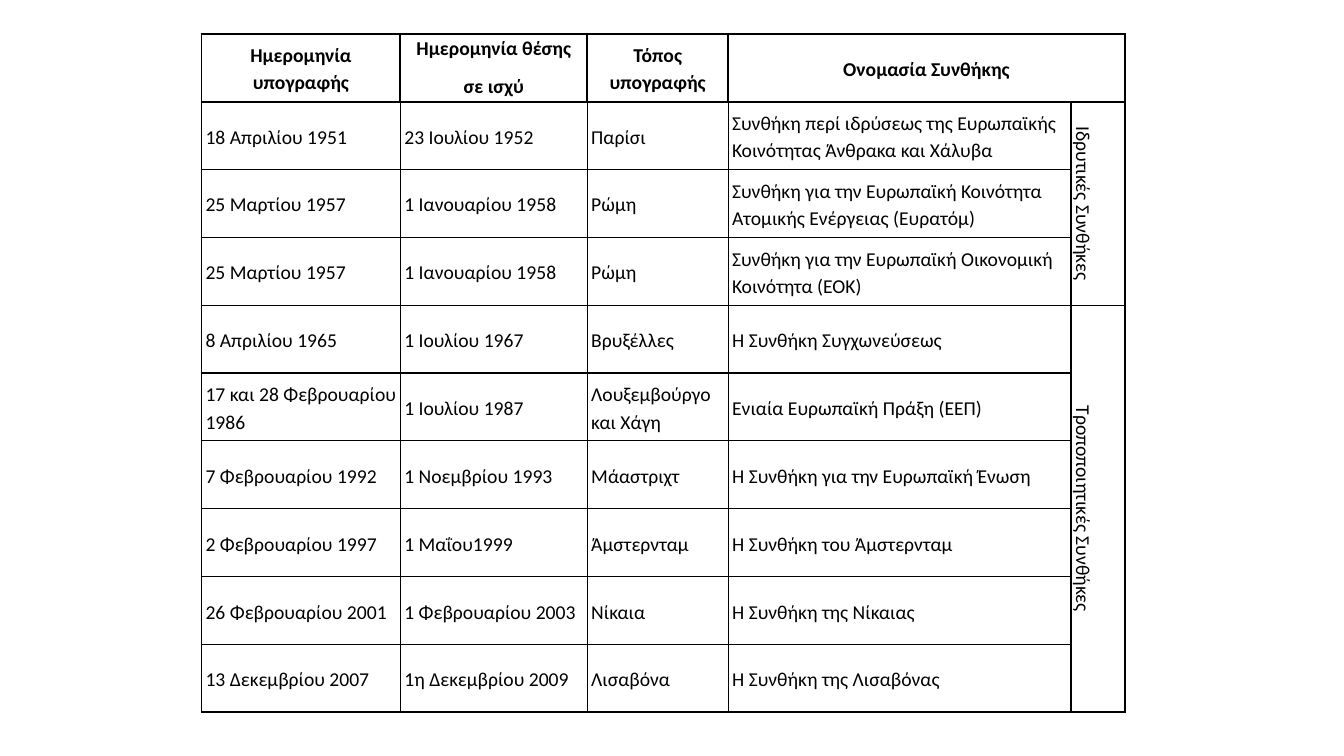
import pptx
import pptx.dml.color
import pptx.enum.text
import pptx.oxml
import pptx.oxml.ns
import pptx.util
from pptx.util import Cm

# Content: header lines, treaties and the vertical group labels
HEADERS = [
    ["Ημερομηνία υπογραφής"],
    ["Ημερομηνία θέσης", "σε ισχύ"],
    ["Τόπος υπογραφής"],
    ["Ονομασία Συνθήκης"],
]
TREATIES = [
    ("18 Απριλίου 1951", "23 Ιουλίου 1952", "Παρίσι",
     "Συνθήκη περί ιδρύσεως της Ευρωπαϊκής Κοινότητας Άνθρακα και Χάλυβα"),
    ("25 Μαρτίου 1957", "1 Ιανουαρίου 1958", "Ρώμη",
     "Συνθήκη για την Ευρωπαϊκή Κοινότητα Ατομικής Ενέργειας (Ευρατόμ)"),
    ("25 Μαρτίου 1957", "1 Ιανουαρίου 1958", "Ρώμη",
     "Συνθήκη για την Ευρωπαϊκή Οικονομική Κοινότητα (ΕΟΚ)"),
    ("8 Απριλίου 1965", "1 Ιουλίου 1967", "Βρυξέλλες",
     "Η Συνθήκη Συγχωνεύσεως"),
    ("17 και 28 Φεβρουαρίου 1986", "1 Ιουλίου 1987", "Λουξεμβούργο και Χάγη",
     "Ενιαία Ευρωπαϊκή Πράξη (ΕΕΠ)"),
    ("7 Φεβρουαρίου 1992", "1 Νοεμβρίου 1993", "Μάαστριχτ",
     "Η Συνθήκη για την Ευρωπαϊκή Ένωση"),
    ("2 Φεβρουαρίου 1997", "1 Μαΐου1999", "Άμστερνταμ",
     "Η Συνθήκη του Άμστερνταμ"),
    ("26 Φεβρουαρίου 2001", "1 Φεβρουαρίου 2003", "Νίκαια",
     "Η Συνθήκη της Νίκαιας"),
    ("13 Δεκεμβρίου 2007", "1η Δεκεμβρίου 2009", "Λισαβόνα",
     "Η Συνθήκη της Λισαβόνας"),
]
GROUPS = [("Ιδρυτικές Συνθήκες", 3), ("Τροποποιητικές Συνθήκες", 6)]

# Look and measures
BLACK = pptx.dml.color.RGBColor(0, 0, 0)
FONT = "Calibri"
THIN, THICK = 1, 1.5
COLUMN_WIDTHS = [5.01, 4.71, 3.55, 8.64, 1.36]
ROW_HEIGHT = 1.71
ROW_COUNT = len(TREATIES) + 1
GROUP_COLUMN = len(COLUMN_WIDTHS) - 1


def write_cell(cell, lines, bold=False, centred=False, line_spacing=1.15):
    cell.vertical_anchor = pptx.enum.text.MSO_ANCHOR.MIDDLE
    cell.margin_left = cell.margin_right = Cm(0.1)
    cell.margin_top = cell.margin_bottom = 0
    frame = cell.text_frame
    for index, line in enumerate(lines):
        para = frame.add_paragraph() if index else frame.paragraphs[0]
        para.line_spacing = line_spacing
        para.space_after = pptx.util.Pt(10)
        if centred:
            para.alignment = pptx.enum.text.PP_ALIGN.CENTER
        span = para.add_run()
        span.text = line
        span.font.name = FONT
        span.font.size = pptx.util.Pt(14)
        span.font.bold = bold
        span.font.color.rgb = BLACK


def draw_borders(cell, left, right, top, bottom):
    properties = cell._tc.get_or_add_tcPr()
    for side, width in zip("LRTB", (left, right, top, bottom)):
        properties.append(pptx.oxml.parse_xml(
            f'<a:ln{side} {pptx.oxml.ns.nsdecls("a")} w="{pptx.util.Pt(width)}">'
            f'<a:solidFill><a:srgbClr val="{BLACK}"/></a:solidFill></a:ln{side}>'))
    cell.fill.background()


def main():
    deck = pptx.Presentation()
    deck.slide_width, deck.slide_height = Cm(33.87), Cm(19.05)
    page = deck.slides.add_slide(deck.slide_layouts[6])

    # Table grid
    table = page.shapes.add_table(
        ROW_COUNT, len(COLUMN_WIDTHS), Cm(5.08), Cm(0.85),
        Cm(sum(COLUMN_WIDTHS)), Cm(ROW_HEIGHT * ROW_COUNT)).table
    table.first_row = table.horz_banding = False
    for column, width in zip(table.columns, COLUMN_WIDTHS):
        column.width = Cm(width)
    for row in table.rows:
        row.height = Cm(ROW_HEIGHT)

    # Header row
    table.cell(0, GROUP_COLUMN - 1).merge(table.cell(0, GROUP_COLUMN))
    for column, lines in enumerate(HEADERS):
        write_cell(table.cell(0, column), lines, bold=True, centred=True,
                   line_spacing=1.0 if len(lines) > 1 else 1.15)

    # Treaties
    for row, treaty in enumerate(TREATIES, start=1):
        for column, value in enumerate(treaty):
            write_cell(table.cell(row, column), [value])

    # Vertical group labels
    first = 1
    for label, count in GROUPS:
        cell = table.cell(first, GROUP_COLUMN)
        cell.merge(table.cell(first + count - 1, GROUP_COLUMN))
        write_cell(cell, [label], centred=True)
        cell._tc.get_or_add_tcPr().set("vert", "vert")
        first += count

    # Borders: thick around the header and on the left and bottom edges
    for row in range(ROW_COUNT):
        for column in range(len(COLUMN_WIDTHS)):
            cell = table.cell(row, column)
            if cell.is_spanned:
                continue
            header = row == 0
            span_rows = cell.span_height if cell.is_merge_origin else 1
            at_bottom = row + span_rows == ROW_COUNT
            draw_borders(
                cell,
                left=THICK if header or column == 0 else THIN,
                right=THICK if header else THIN,
                top=THICK if row <= 1 else THIN,
                bottom=THICK if header or at_bottom else THIN)

    deck.save("out.pptx")


if __name__ == "__main__":
    main()
